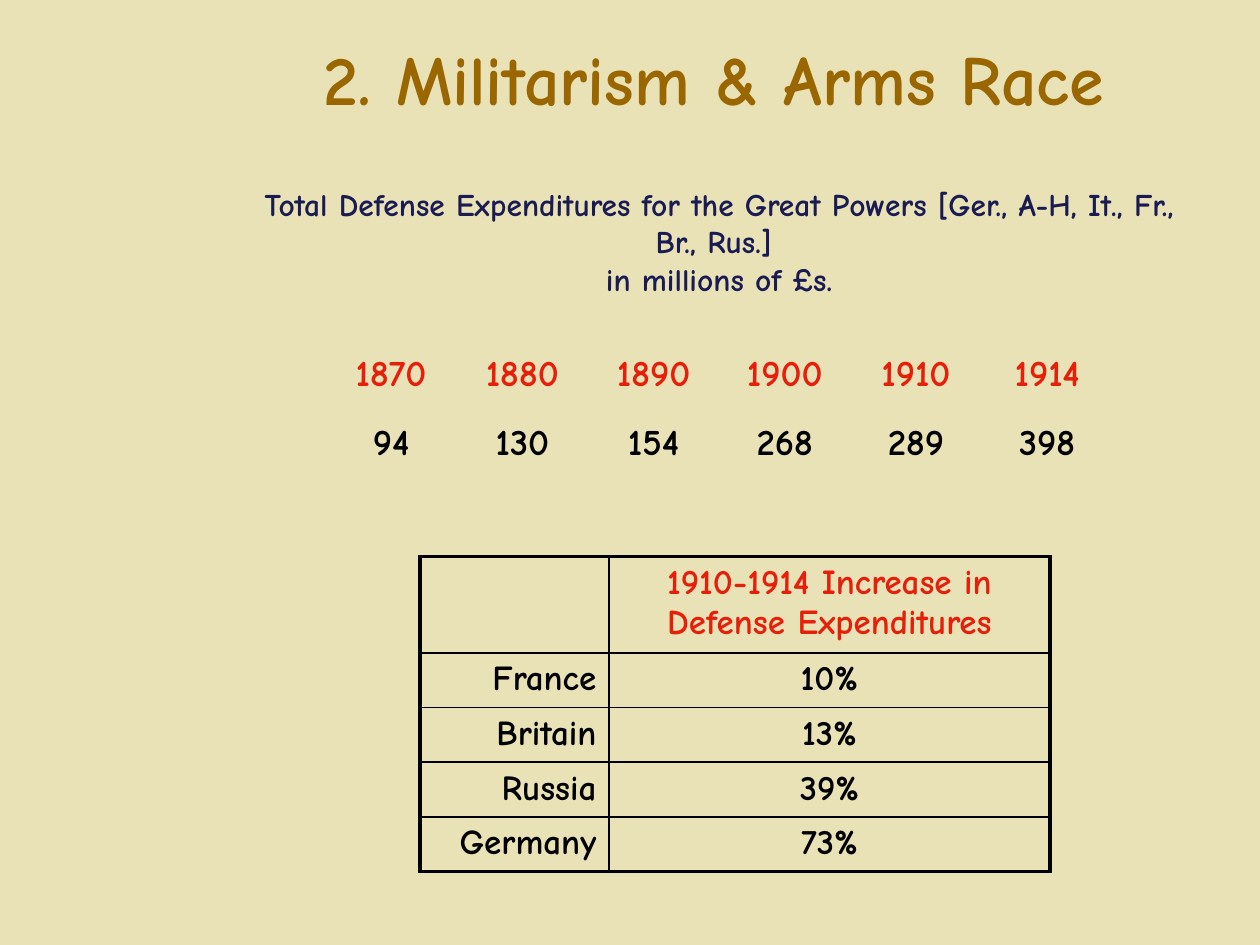
import pptx
import pptx.dml.color
import pptx.enum.text
import pptx.oxml
import pptx.oxml.ns
import pptx.util

Pt = pptx.util.Pt
ALIGN = pptx.enum.text.PP_ALIGN
ANCHOR = pptx.enum.text.MSO_ANCHOR
BROWN, NAVY, RED, BLACK = "996600", "1B1B53", "E61F0A", "000000"
THICK, THIN = 2.25, 1


def rgb(hex_color):
    return pptx.dml.color.RGBColor.from_string(hex_color)


def drawing(xml):
    """Make an element whose default namespace is DrawingML."""
    ns = pptx.oxml.ns.nsdecls("a").replace("xmlns:a", "xmlns")
    return pptx.oxml.parse_xml(xml.replace(">", f" {ns}>", 1))


class SlideBuilder:
    font = "Comic Neue"

    def __init__(self, prs, background):
        self.slide = prs.slides.add_slide(prs.slide_layouts[5])
        fill = self.slide.background.fill
        fill.solid()
        fill.fore_color.rgb = rgb(background)

    def set_text(self, tf, text, size, color, align=ALIGN.CENTER):
        tf.word_wrap = True
        p = tf.paragraphs[0]
        p.text = text
        p.alignment = align
        p.font.name = self.font
        p.font.size = Pt(size)
        p.font.bold = True
        p.font.color.rgb = rgb(color)

    def place(self, sp, box, text, size, color):
        sp.left, sp.top, sp.width, sp.height = map(Pt, box)
        tf = sp.text_frame
        tf.auto_size = pptx.enum.text.MSO_AUTO_SIZE.NONE
        tf.vertical_anchor = ANCHOR.TOP
        self.set_text(tf, text, size, color)

    def title(self, box, text, size, color, shadow):
        sp = self.slide.shapes.title
        self.place(sp, box, text, size, color)
        r = sp.text_frame.paragraphs[0].runs[0]
        r.font.color.rgb = rgb(color)
        r._r.get_or_add_rPr().append(drawing(
            f'<effectLst><outerShdw blurRad="{Pt(4)}" dist="{Pt(4)}" dir="2700000">'
            f'<srgbClr val="{shadow}"/></outerShdw></effectLst>'))

    def text(self, box, text, size, color):
        sp = self.slide.shapes.add_textbox(*map(Pt, box))
        self.place(sp, box, text, size, color)

    def table(self, left, top, widths, heights):
        shape = self.slide.shapes.add_table(
            len(heights), len(widths), Pt(left), Pt(top), Pt(sum(widths)), Pt(sum(heights)))
        table = shape.table
        table.first_row = table.horz_banding = False
        for column, width in zip(table.columns, widths):
            column.width = Pt(width)
        for row, height in zip(table.rows, heights):
            row.height = Pt(height)
        for cell in table.iter_cells():
            cell.fill.background()
        return table

    def borders(self, cell, **widths):
        """Draw the sides L, R, T and B in points; a side not given stays empty."""
        tcPr = cell._tc.get_or_add_tcPr()
        for i, side in enumerate("LRTB"):
            width = widths.get(side, 0)
            paint = (f'<solidFill><srgbClr val="{BLACK}"/></solidFill>'
                     if width else "<noFill/>")
            tcPr.insert(i, drawing(f'<ln{side} w="{Pt(width)}">{paint}</ln{side}>'))

    def plain_table(self, left, top, widths, heights, rows, size, colors):
        table = self.table(left, top, widths, heights)
        for i, (row, color) in enumerate(zip(rows, colors)):
            for j, value in enumerate(row):
                cell = table.cell(i, j)
                cell.vertical_anchor = ANCHOR.MIDDLE
                self.set_text(cell.text_frame, value, size, color)
                self.borders(cell)

    def framed_table(self, left, top, widths, heights, rows, size):
        """Thick outer frame, thin inner grid, red header row."""
        table = self.table(left, top, widths, heights)
        last_row, last_col = len(heights) - 1, len(widths) - 1
        for i, row in enumerate(rows):
            for j, value in enumerate(row):
                cell = table.cell(i, j)
                align = ALIGN.CENTER if j else ALIGN.RIGHT
                self.set_text(cell.text_frame, value, size, BLACK if i else RED, align)
                self.borders(cell,
                             L=THIN if j else THICK,
                             R=THICK if j == last_col else THIN,
                             T=THIN if i else THICK,
                             B=THICK if i == last_row else THIN)


def main():
    prs = pptx.Presentation()
    prs.slide_width, prs.slide_height = Pt(720), Pt(540)
    s = SlideBuilder(prs, "E9E2B6")
    s.title((108, 16.5, 600, 55.5), "2. Militarism & Arms Race", 40, BROWN, NAVY)

    spending = {"1870": "94", "1880": "130", "1890": "154",
                "1900": "268", "1910": "289", "1914": "398"}
    s.plain_table(186, 198, [75] * len(spending), [32.5, 46],
                  [spending.keys(), spending.values()], 21, [RED, BLACK])
    s.text((138, 102, 546, 93.6),
           "Total Defense Expenditures for the Great Powers "
           "[Ger., A-H, It., Fr., Br., Rus.] \vin millions of £s.", 18, NAVY)

    increases = [("", "1910-1914 Increase in Defense Expenditures"),
                 ("France", "10%"), ("Britain", "13%"),
                 ("Russia", "39%"), ("Germany", "73%")]
    s.framed_table(240, 318, [108, 252], [55.2] + [31.2] * 4, increases, 20)
    prs.save("out.pptx")


if __name__ == "__main__":
    main()
